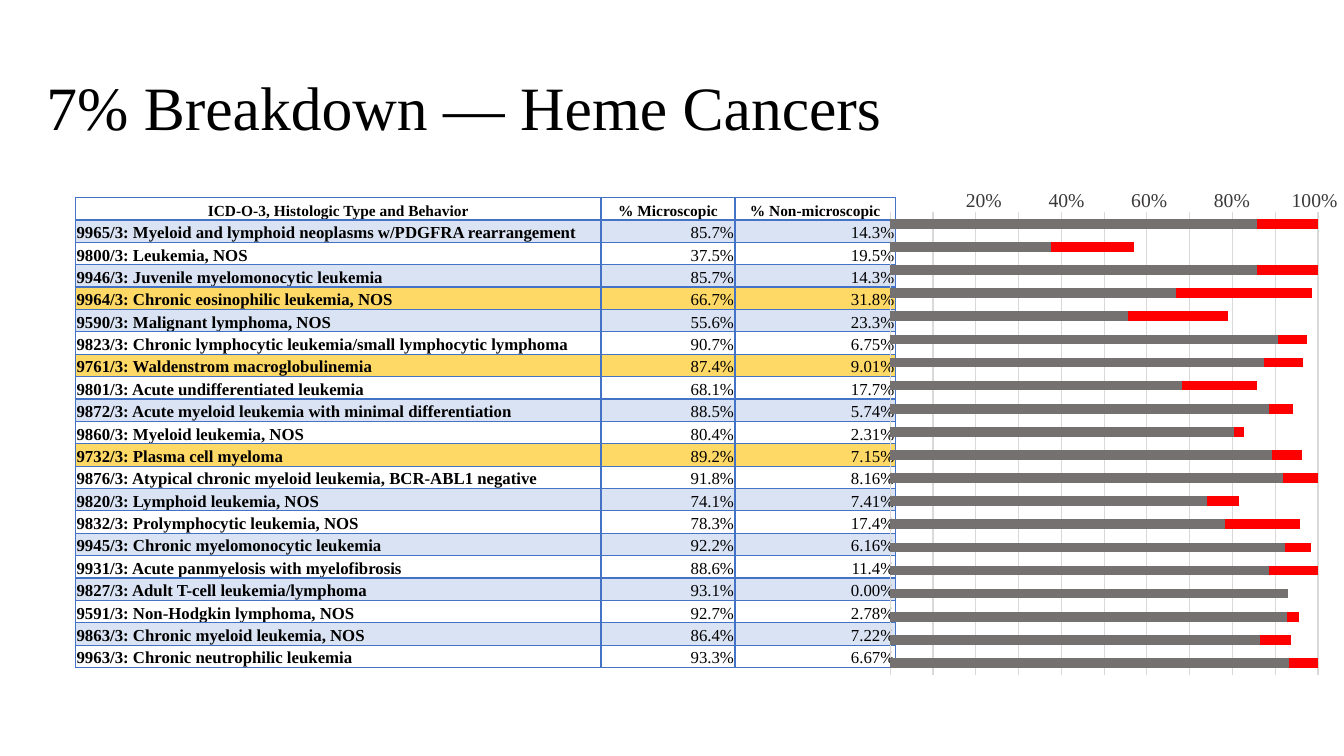
from dataclasses import dataclass

from lxml import etree
from pptx import Presentation
from pptx.chart.data import CategoryChartData
from pptx.dml.color import RGBColor
from pptx.enum.chart import XL_CHART_TYPE
from pptx.enum.text import MSO_ANCHOR, MSO_AUTO_SIZE, PP_ALIGN
from pptx.oxml import parse_xml
from pptx.oxml.ns import nsdecls, qn
from pptx.util import Inches, Pt

BAR_STACKED = XL_CHART_TYPE.BAR_STACKED
MIDDLE, BOTTOM = MSO_ANCHOR.MIDDLE, MSO_ANCHOR.BOTTOM
NO_AUTOFIT = MSO_AUTO_SIZE.NONE
LEFT, CENTER, RIGHT = PP_ALIGN.LEFT, PP_ALIGN.CENTER, PP_ALIGN.RIGHT


@dataclass(frozen=True)
class Theme:
    font: str = "Times New Roman"
    chart_font: str = "Calibri"
    black: str = "000000"
    scale_text: str = "3B3838"
    border: str = "4472C4"
    band: str = "DAE3F3"
    highlight: str = "FFD966"
    grid: str = "D9D9D9"
    microscopic: str = "767171"
    non_microscopic: str = "FF0000"
    title_size: int = 44
    scale_size: int = 14
    body_size: int = 12
    header_size: int = 11
    chart_size: int = 10


HEADERS = ["ICD-O-3, Histologic Type and Behavior", "% Microscopic", "% Non-microscopic"]
CANCERS = [
    ("9965/3: Myeloid and lymphoid neoplasms w/PDGFRA rearrangement", "85.7%", "14.3%"),
    ("9800/3: Leukemia, NOS", "37.5%", "19.5%"),
    ("9946/3: Juvenile myelomonocytic leukemia", "85.7%", "14.3%"),
    ("9964/3: Chronic eosinophilic leukemia, NOS", "66.7%", "31.8%"),
    ("9590/3: Malignant lymphoma, NOS", "55.6%", "23.3%"),
    ("9823/3: Chronic lymphocytic leukemia/small lymphocytic lymphoma", "90.7%", "6.75%"),
    ("9761/3: Waldenstrom macroglobulinemia", "87.4%", "9.01%"),
    ("9801/3: Acute undifferentiated leukemia", "68.1%", "17.7%"),
    ("9872/3: Acute myeloid leukemia with minimal differentiation", "88.5%", "5.74%"),
    ("9860/3: Myeloid leukemia, NOS", "80.4%", "2.31%"),
    ("9732/3: Plasma cell myeloma", "89.2%", "7.15%"),
    ("9876/3: Atypical chronic myeloid leukemia, BCR-ABL1 negative", "91.8%", "8.16%"),
    ("9820/3: Lymphoid leukemia, NOS", "74.1%", "7.41%"),
    ("9832/3: Prolymphocytic leukemia, NOS", "78.3%", "17.4%"),
    ("9945/3: Chronic myelomonocytic leukemia", "92.2%", "6.16%"),
    ("9931/3: Acute panmyelosis with myelofibrosis", "88.6%", "11.4%"),
    ("9827/3: Adult T-cell leukemia/lymphoma", "93.1%", "0.00%"),
    ("9591/3: Non-Hodgkin lymphoma, NOS", "92.7%", "2.78%"),
    ("9863/3: Chronic myeloid leukemia, NOS", "86.4%", "7.22%"),
    ("9963/3: Chronic neutrophilic leukemia", "93.3%", "6.67%"),
]
HIGHLIGHTED_ROWS = {4, 7, 11}


def apply(target, formats):
    for name, value in formats.items():
        setattr(target, name, value)


def fraction(percent):
    return round(float(percent.rstrip("%")) / 100, 4)


class SlideBuilder:
    def __init__(self, slide, theme):
        self.slide = slide
        self.theme = theme

    def style_font(self, font, size, color, bold=False, name=None):
        apply(font, {"name": name or self.theme.font, "size": Pt(size), "bold": bold})
        font.color.rgb = RGBColor.from_string(color)

    def title(self, text, left, top, width, height):
        heading = self.slide.shapes.title
        apply(heading, {"left": Inches(left), "top": Inches(top),
                        "width": Inches(width), "height": Inches(height)})
        apply(heading.text_frame, {"text": text, "vertical_anchor": MIDDLE,
                                   "word_wrap": True, "auto_size": NO_AUTOFIT})
        paragraph = heading.text_frame.paragraphs[0]
        apply(paragraph, {"alignment": LEFT, "line_spacing": 0.9})
        self.style_font(paragraph.runs[0].font, self.theme.title_size, self.theme.black)

    def border_cell(self, cell, bottom_width):
        properties = cell._tc.get_or_add_tcPr()
        for side, width in (("L", 1), ("R", 1), ("T", 1), ("B", bottom_width)):
            properties.append(parse_xml(
                f'<a:ln{side} {nsdecls("a")} w="{Pt(width)}"><a:solidFill>'
                f'<a:srgbClr val="{self.theme.border}"/></a:solidFill></a:ln{side}>'))

    def cell(self, cell, text, size, bold, alignment, fill, bottom_width):
        apply(cell, {"text": text, "vertical_anchor": BOTTOM, "margin_left": Inches(0.01),
                     "margin_right": Inches(0.01), "margin_top": Inches(0.01),
                     "margin_bottom": 0})
        paragraph = cell.text_frame.paragraphs[0]
        paragraph.alignment = alignment
        self.style_font(paragraph.runs[0].font, size, self.theme.black, bold)
        self.border_cell(cell, bottom_width)
        if fill:
            cell.fill.solid()
            cell.fill.fore_color.rgb = RGBColor.from_string(fill)
        else:
            cell.fill.background()

    def row_fill(self, row):
        if row in HIGHLIGHTED_ROWS:
            return self.theme.highlight
        return self.theme.band if row % 2 else None

    def table(self, headers, records, left, top, column_widths, height):
        row_count = len(records) + 1
        table = self.slide.shapes.add_table(
            row_count, len(headers), Inches(left), Inches(top),
            Inches(sum(column_widths)), Inches(height)).table
        apply(table, {"first_row": False, "horz_banding": False})
        for column, width in zip(table.columns, column_widths):
            column.width = Inches(width)
        for row in table.rows:
            row.height = Inches(height / row_count)
        for column, header in enumerate(headers):
            self.cell(table.cell(0, column), header, self.theme.header_size,
                      True, CENTER, None, 2)
        for row, record in enumerate(records, 1):
            for column, text in enumerate(record):
                self.cell(table.cell(row, column), text, self.theme.body_size, column == 0,
                          RIGHT if column else LEFT, self.row_fill(row), 1)

    def stacked_bars(self, series, left, top, width, height):
        """Add bars for (name, values, color) triples, first category on top."""
        data = CategoryChartData(number_format="0.00%")
        data.categories = [str(i + 1) for i in range(len(series[0][1]))]
        for name, values, _ in series:
            data.add_series(name, values)
        chart = self.slide.shapes.add_chart(
            BAR_STACKED, Inches(left), Inches(top), Inches(width), Inches(height), data).chart
        apply(chart, {"has_legend": False, "has_title": False})
        self.style_font(chart.font, self.theme.chart_size, self.theme.black,
                        name=self.theme.chart_font)
        plot = chart.plots[0]
        apply(plot, {"gap_width": 140, "overlap": 100, "vary_by_categories": False})
        for bars, (_, _, color) in zip(plot.series, series):
            bars.format.fill.solid()
            bars.format.fill.fore_color.rgb = RGBColor.from_string(color)
        apply(chart.category_axis, {"reverse_order": True, "visible": False})
        apply(chart.value_axis, {"minimum_scale": 0, "maximum_scale": 1, "major_unit": 0.1,
                                 "has_major_gridlines": True, "visible": False})
        grid = chart.value_axis.major_gridlines.format.line
        grid.width = Pt(0.75)
        grid.color.rgb = RGBColor.from_string(self.theme.grid)
        self.fix_plot_area(chart, {"x": 0.018, "y": 0.02, "w": 0.96, "h": 0.96})

    def fix_plot_area(self, chart, shares):
        plot_area = chart._chartSpace.find(f".//{qn('c:plotArea')}")
        for layout in plot_area.findall(qn("c:layout")):
            plot_area.remove(layout)
        layout = etree.Element(qn("c:layout"))
        manual = etree.SubElement(layout, qn("c:manualLayout"))
        settings = {"layoutTarget": "inner", "xMode": "edge", "yMode": "edge", **shares}
        for tag, value in settings.items():
            etree.SubElement(manual, qn(f"c:{tag}"), val=str(value))
        plot_area.insert(0, layout)

    def scale_labels(self, labels, left, top, width, height, first_stop, step):
        """Add one line of labels, each centred on its own tab stop."""
        frame = self.slide.shapes.add_textbox(
            Inches(left), Inches(top), Inches(width), Inches(height)).text_frame
        frame.word_wrap = True
        paragraph = frame.paragraphs[0]
        run = paragraph.add_run()
        run.text = "".join(f"\t{label}" for label in labels)
        self.style_font(run.font, self.theme.scale_size, self.theme.scale_text)
        stops = etree.SubElement(paragraph._p.get_or_add_pPr(), qn("a:tabLst"))
        for i in range(len(labels)):
            etree.SubElement(stops, qn("a:tab"), pos=str(Inches(first_stop + i * step)),
                             algn="ctr")


def main():
    theme = Theme()
    presentation = Presentation()
    apply(presentation, {"slide_width": Inches(13.33), "slide_height": Inches(7.5)})
    slide = presentation.slides.add_slide(presentation.slide_layouts.get_by_name("Title Only"))
    builder = SlideBuilder(slide, theme)
    builder.title("7% Breakdown — Heme Cancers", 0.36, 0.37, 8.91, 1.45)
    builder.table(HEADERS, CANCERS, 0.75, 1.96, [5.21, 1.33, 1.59], 4.67)
    _, microscopic, non_microscopic = zip(*CANCERS)
    builder.stacked_bars(
        [("Series 1", [fraction(p) for p in microscopic], theme.microscopic),
         ("Series 2", [fraction(p) for p in non_microscopic], theme.non_microscopic)],
        8.75, 2.01, 4.42, 4.78)
    builder.scale_labels([f"{p}%" for p in range(20, 101, 20)],
                         8.88, 1.82, 4.75, 0.34, 0.78, 0.82)
    presentation.save("out.pptx")


if __name__ == "__main__":
    main()
